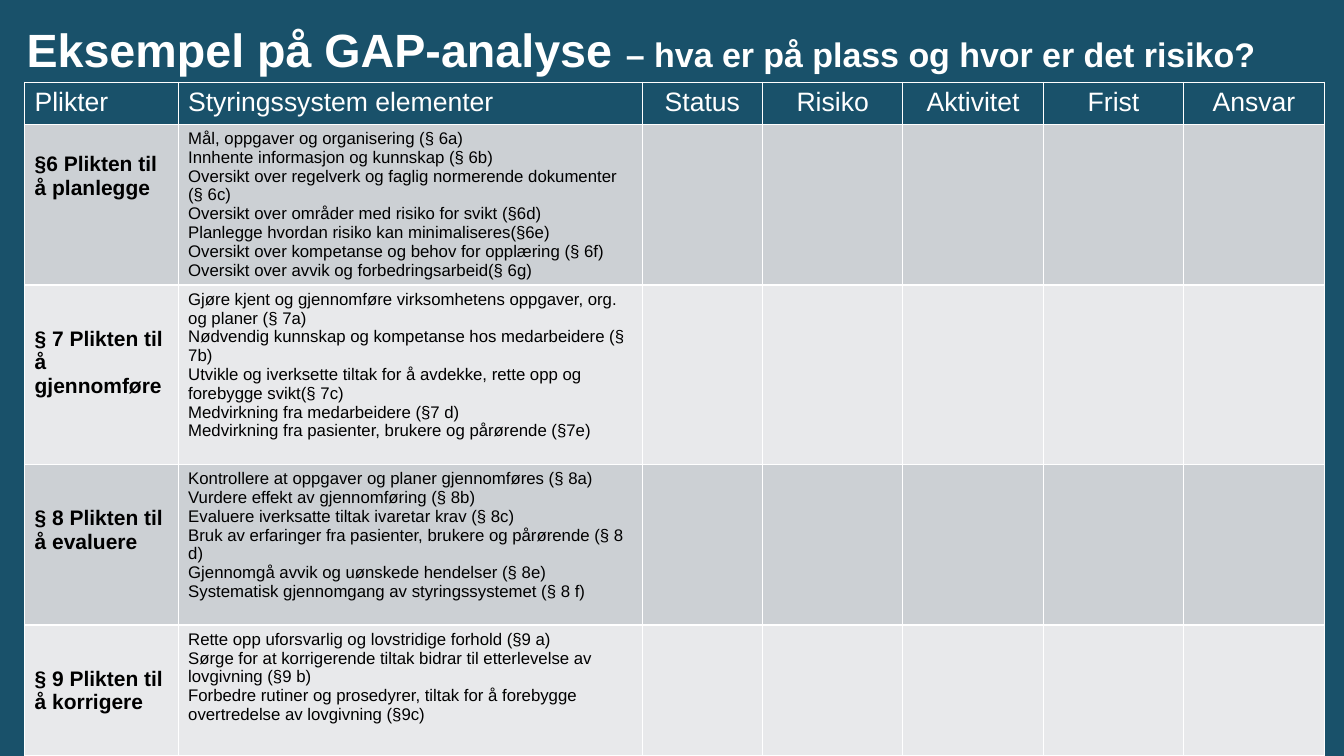
from pptx import Presentation
from pptx.dml.color import RGBColor
from pptx.enum.shapes import MSO_SHAPE
from pptx.enum.text import MSO_ANCHOR, PP_ALIGN
from pptx.oxml import parse_xml
from pptx.oxml.ns import nsdecls
from pptx.util import Cm, Pt

COLORS = {
    "petrol": "19516A",
    "white": "FFFFFF",
    "black": "000000",
    "dark_band": "CCD0D4",
    "light_band": "E8E9EB",
}
HEADINGS = ["Plikter", "Styringssystem elementer", "Status", "Risiko",
            "Aktivitet", "Frist", "Ansvar"]
DUTIES = [
    ("§6 Plikten til å planlegge", [
        "Mål, oppgaver og organisering (§ 6a)",
        "Innhente informasjon og kunnskap (§ 6b)",
        "Oversikt over regelverk og faglig normerende dokumenter (§ 6c)",
        "Oversikt over områder med risiko for svikt (§6d)",
        "Planlegge hvordan risiko kan minimaliseres(§6e)",
        "Oversikt over kompetanse og behov for opplæring (§ 6f)",
        "Oversikt over avvik og forbedringsarbeid(§ 6g)",
    ]),
    ("§ 7 Plikten til å gjennomføre", [
        "Gjøre kjent og gjennomføre virksomhetens oppgaver, org. og planer (§ 7a)",
        "Nødvendig kunnskap og kompetanse hos medarbeidere (§ 7b)",
        "Utvikle og iverksette tiltak for å avdekke, rette opp og forebygge svikt(§ 7c)",
        "Medvirkning fra medarbeidere (§7 d)",
        "Medvirkning fra pasienter, brukere og pårørende (§7e)",
    ]),
    ("§ 8 Plikten til å evaluere", [
        "Kontrollere at oppgaver og planer gjennomføres (§ 8a)",
        "Vurdere effekt av gjennomføring (§ 8b)",
        "Evaluere iverksatte tiltak ivaretar krav (§ 8c)",
        "Bruk av erfaringer fra pasienter, brukere og pårørende (§ 8 d)",
        "Gjennomgå avvik og uønskede hendelser (§ 8e)",
        "Systematisk gjennomgang av styringssystemet (§ 8 f)",
    ]),
    ("§ 9 Plikten til å korrigere", [
        "Rette opp uforsvarlig og lovstridige forhold (§9 a)",
        "Sørge for at korrigerende tiltak bidrar til etterlevelse av lovgivning (§9 b)",
        "Forbedre rutiner og prosedyrer, tiltak for å forebygge overtredelse av lovgivning (§9c)",
    ]),
]
COLUMN_WIDTHS = [3.87, 11.7, 3.03] + [3.54] * 4
ROW_HEIGHTS = [1.06, 4.05, 4.52, 4.05, 3.3]


def style_cell(cell, fill):
    for side in ("lnL", "lnR", "lnT", "lnB"):
        cell._tc.get_or_add_tcPr().append(parse_xml(
            f'<a:{side} {nsdecls("a")} w="12700"><a:solidFill>'
            f'<a:srgbClr val="{COLORS["white"]}"/></a:solidFill></a:{side}>'))
    cell.fill.solid()
    cell.fill.fore_color.rgb = RGBColor.from_string(COLORS[fill])


def write(frame, lines, size, color, bold=False, align=PP_ALIGN.LEFT):
    frame.text = "\n".join(lines)
    for paragraph in frame.paragraphs:
        paragraph.alignment = align
        font = paragraph.font
        font.name, font.size, font.bold = "Arial", Pt(size), bold
        font.color.rgb = RGBColor.from_string(COLORS[color])


prs = Presentation()
prs.slide_width, prs.slide_height = Cm(33.88), Cm(19.05)
slide = prs.slides.add_slide(prs.slide_layouts[6])

backdrop = slide.shapes.add_shape(
    MSO_SHAPE.RECTANGLE, 0, 0, prs.slide_width, prs.slide_height)
backdrop.shadow.inherit = False
backdrop.fill.solid()
backdrop.fill.fore_color.rgb = RGBColor.from_string(COLORS["petrol"])
backdrop.line.fill.background()

gap_table = slide.shapes.add_table(
    len(ROW_HEIGHTS), len(COLUMN_WIDTHS), Cm(0.62), Cm(2.07),
    Cm(sum(COLUMN_WIDTHS)), Cm(sum(ROW_HEIGHTS))).table
gap_table.first_row = False
gap_table.horz_banding = False
for column, width in zip(gap_table.columns, COLUMN_WIDTHS):
    column.width = Cm(width)
for row, height in zip(gap_table.rows, ROW_HEIGHTS):
    row.height = Cm(height)

for index, heading in enumerate(HEADINGS):
    cell = gap_table.cell(0, index)
    style_cell(cell, "petrol")
    write(cell.text_frame, [heading], 19, "white",
          align=PP_ALIGN.LEFT if index < 2 else PP_ALIGN.CENTER)

for number, (duty, elements) in enumerate(DUTIES, start=1):
    for cell in gap_table.rows[number].cells:
        style_cell(cell, "dark_band" if number % 2 else "light_band")
    duty_cell = gap_table.cell(number, 0)
    duty_cell.margin_top = Cm(0.72 if number == 1 else 1.07)
    write(duty_cell.text_frame, [duty], 15, "black", bold=True)
    write(gap_table.cell(number, 1).text_frame, elements, 12, "black")

title = slide.shapes.add_textbox(Cm(0.67), Cm(0), Cm(32.69), Cm(1.96)).text_frame
title.word_wrap = True
title.vertical_anchor = MSO_ANCHOR.BOTTOM
title.margin_left = title.margin_right = title.margin_top = title.margin_bottom = 0
write(title, ["Eksempel på GAP-analyse "], 33.3, "white", bold=True)
title.paragraphs[0].line_spacing = 0.9
question = title.paragraphs[0].add_run()
question.text = "– hva er på plass og hvor er det risiko?"
question.font.size = Pt(24.3)

prs.save("out.pptx")
